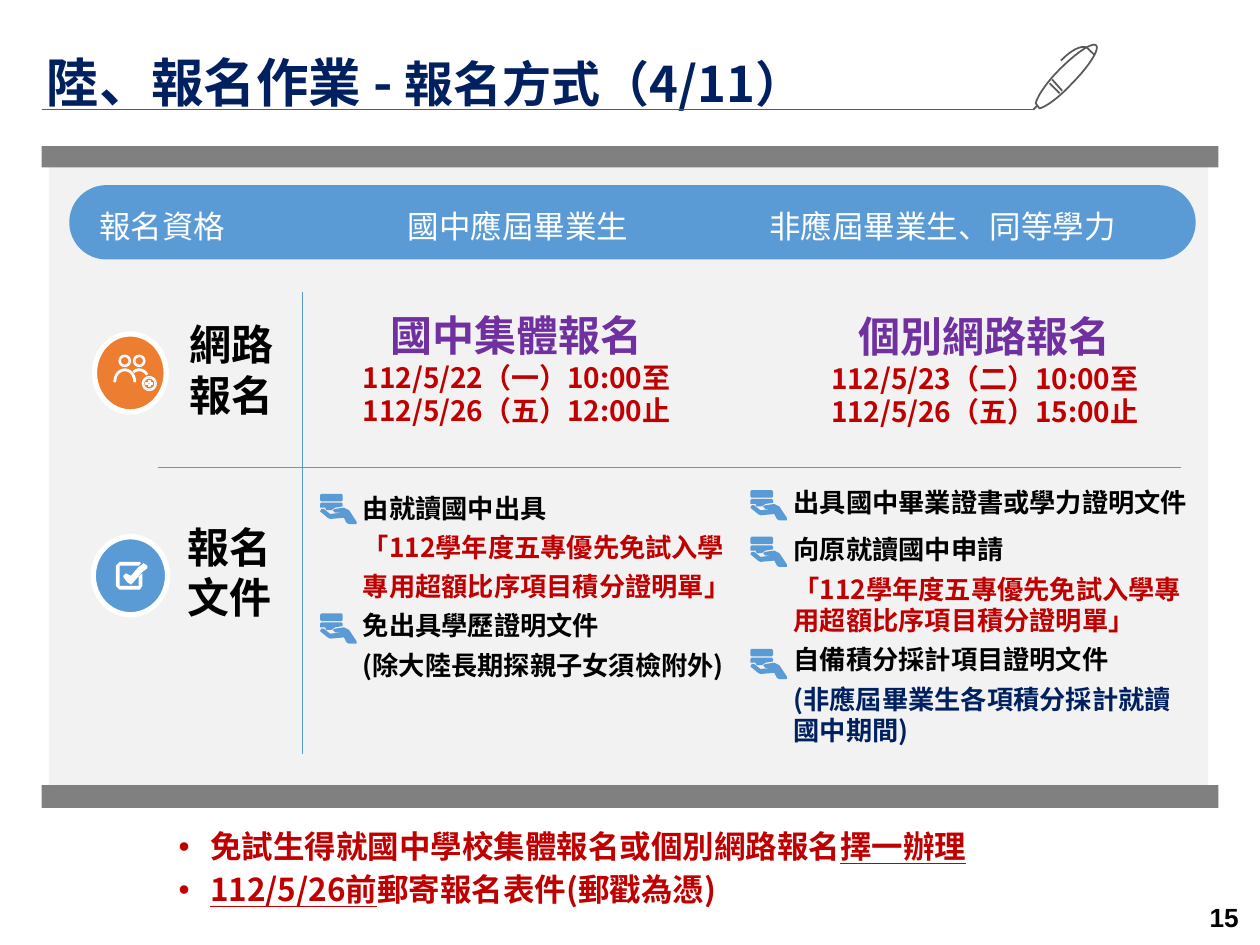
from dataclasses import dataclass
from math import cos, radians, sin

from lxml import etree
from pptx import Presentation
from pptx.dml.color import RGBColor
from pptx.enum.shapes import MSO_CONNECTOR, MSO_SHAPE
from pptx.enum.text import MSO_ANCHOR, MSO_AUTO_SIZE, PP_ALIGN
from pptx.oxml.ns import qn
from pptx.util import Pt

LEFT, CENTER, RIGHT = PP_ALIGN.LEFT, PP_ALIGN.CENTER, PP_ALIGN.RIGHT
TOP, MIDDLE, BOTTOM = MSO_ANCHOR.TOP, MSO_ANCHOR.MIDDLE, MSO_ANCHOR.BOTTOM
RECTANGLE, ROUNDED, OVAL = MSO_SHAPE.RECTANGLE, MSO_SHAPE.ROUNDED_RECTANGLE, MSO_SHAPE.OVAL
STRAIGHT = MSO_CONNECTOR.STRAIGHT
GROW, FIXED = MSO_AUTO_SIZE.SHAPE_TO_FIT_TEXT, MSO_AUTO_SIZE.NONE
DEFAULT_MARGINS, TIGHT_MARGINS = (7.2, 3.6), (5.04, 2.88)
ICON_UNIT = 0.72


@dataclass(frozen=True)
class Theme:
    font: str = "Noto Sans CJK SC"
    number_font: str = "Arial"
    navy: str = "002060"
    red: str = "C00000"
    purple: str = "7030A0"
    blue: str = "5B9BD5"
    orange: str = "ED7D31"
    panel: str = "F2F2F2"
    bar: str = "808080"
    ink: str = "595959"
    black: str = "000000"
    white: str = "FFFFFF"
    title: int = 30
    subtitle: int = 28
    heading: int = 24
    note: int = 18
    date: int = 16
    body: int = 15


THEME = Theme()


@dataclass
class Line:
    runs: object
    size: int
    color: str
    bold: bool = True
    align: object = LEFT
    before: float = 0
    after: float = 0
    spacing: float = 1
    bullet: bool = False
    tabs: tuple = ()
    font: str = THEME.font


def arc(x, y, radius_x, radius_y, start=0, end=360):
    steps = 16
    angles = [radians(start + (end - start) * i / steps) for i in range(steps + 1)]
    return [(x + radius_x * cos(a), y + radius_y * sin(a)) for a in angles]


def band(x, y, radius_x, radius_y, start, end):
    return arc(x, y, radius_x, radius_y, start, end) + arc(x, y, radius_x - 1.2, radius_y - 1.2, end, start)


def curve(a, b, c, d):
    steps = [i / 10 for i in range(11)]
    return [tuple((1 - t) ** 3 * p + 3 * t * (1 - t) ** 2 * q + 3 * t * t * (1 - t) * r + t ** 3 * s
                  for p, q, r, s in zip(a, b, c, d)) for t in steps]


HAND = [
    [(19, 11), (23, 13), (29, 22), (29, 24), (23, 24), (21, 23), (19, 19), (8, 20), (6, 19), (0, 14),
     (1, 12), (3, 12), (8, 16), (18, 15), (12, 15), (10, 13), (12, 12)],
    [(1, 7), (17, 7), (18, 8), (18, 10), (12, 11), (9, 13), (5, 13), (4, 11), (0, 11), (0, 8)],
    [(1, 0), (17, 0), (18, 1), (18, 5), (17, 6), (1, 6), (0, 5), (0, 1)],
]
CHECK_BOX = [
    [(22, 1), (25, 3), (25, 5), (21, 8), (14, 16), (12, 18), (9, 16), (6, 12), (6, 11), (8, 9),
     (12, 11), (18, 4), (21, 2)],
    [(3, 0), (19, 0), (20, 1), (18, 3), (3, 3), (3, 19), (18, 19), (18, 12), (21, 9), (21, 19),
     (19, 22), (3, 22), (0, 19), (0, 3)],
]
PEOPLE = [arc(x, y, r, r) for x, y, outer in ((9, 4.5, 4.5), (20.5, 4.5, 4.5), (28.5, 22.5, 5.5))
          for r in (outer, outer - 1)] + [
    band(9, 21, 8.5, 10, 180, 360),
    band(20.5, 20, 8, 9, 235, 325),
    [(28, 20), (29, 20), (29, 22), (31, 22), (31, 23), (29, 23), (29, 25), (28, 25), (28, 23),
     (26, 23), (26, 22), (28, 22)],
]
PEN_BODY = [curve((50, 3), (47, 0), (34, 9), (21, 22)) + curve((21, 22), (10, 33), (3, 44), (2, 49))
            + curve((5, 53), (10, 52), (21, 44), (31, 33)) + curve((31, 33), (44, 20), (53, 6), (50, 3))]
PEN_DETAILS = [
    [(21, 41), (13, 33)], [(15, 30), (23, 39)], [(3, 51), (0, 54)],
    [(49, 11)] + curve((43, 5), (43, 5), (37, 0), (22, 15)),
]


class SlideBuilder:
    """Holds the theme and the current slide, and adds each kind of element."""

    def __init__(self, slide, theme):
        self.slide = slide
        self.theme = theme

    def paint(self, shape, fill=None, line=None, width=1):
        shape.shadow.inherit = False
        if fill:
            shape.fill.solid()
            shape.fill.fore_color.rgb = RGBColor.from_string(fill)
        else:
            shape.fill.background()
        if line:
            shape.line.color.rgb = RGBColor.from_string(line)
            shape.line.width = Pt(width)
        else:
            shape.line.fill.background()

    def shape(self, kind, box, fill, line=None, width=1):
        shape = self.slide.shapes.add_shape(kind, *map(Pt, box))
        self.paint(shape, fill, line, width)
        return shape

    def rule(self, start, end, color, width):
        connector = self.slide.shapes.add_connector(STRAIGHT, *map(Pt, start + end))
        connector.line.color.rgb = RGBColor.from_string(color)
        connector.line.width = Pt(width)
        etree.SubElement(connector._element.spPr, qn("a:effectLst"))

    def icon(self, contours, left, top, fill=None, line=None, width=1, closed=True):
        scaled = [[(x * 100, y * 100) for x, y in contour] for contour in contours]
        builder = self.slide.shapes.build_freeform(*scaled[0][0], scale=Pt(ICON_UNIT) / 100)
        for index, contour in enumerate(scaled):
            if index:
                builder.move_to(*contour[0])
            builder.add_line_segments(contour[1:], close=closed)
        self.paint(builder.convert_to_shape(Pt(left), Pt(top)), fill, line, width)

    def set_text(self, frame, lines, anchor=TOP, wrap=True, margins=DEFAULT_MARGINS, fit=FIXED):
        frame.word_wrap = wrap
        frame.auto_size = fit
        frame.vertical_anchor = anchor
        frame.margin_left = frame.margin_right = Pt(margins[0])
        frame.margin_top = frame.margin_bottom = Pt(margins[1])
        for index, line in enumerate(lines):
            paragraph = frame.add_paragraph() if index else frame.paragraphs[0]
            self.style_paragraph(paragraph, line)
            runs = [(line.runs, {})] if isinstance(line.runs, str) else line.runs
            for text, overrides in runs:
                run = paragraph.add_run()
                run.text = text
                if "size" in overrides:
                    run.font.size = Pt(overrides["size"])
                if "underline" in overrides:
                    run.font.underline = overrides["underline"]

    def style_paragraph(self, paragraph, line):
        properties = paragraph._p.get_or_add_pPr()
        if line.bullet:
            properties.set("marL", str(Pt(18)))
            properties.set("indent", str(-Pt(18)))
            etree.SubElement(properties, qn("a:buFont"), typeface="Arial")
            etree.SubElement(properties, qn("a:buChar"), char="•")
        if line.tabs:
            stops = etree.SubElement(properties, qn("a:tabLst"))
            for position in line.tabs:
                etree.SubElement(stops, qn("a:tab"), pos=str(Pt(position)), algn="l")
        paragraph.alignment = line.align
        paragraph.line_spacing = line.spacing
        paragraph.space_before, paragraph.space_after = Pt(line.before), Pt(line.after)
        font = paragraph.font
        font.size, font.bold, font.name = Pt(line.size), line.bold, line.font
        font.color.rgb = RGBColor.from_string(line.color)
        etree.SubElement(font._element, qn("a:ea"), typeface=line.font)

    def text(self, box, lines, **options):
        self.set_text(self.slide.shapes.add_textbox(*map(Pt, box)).text_frame, lines, **options)

    def title(self, box, line):
        title = self.slide.shapes.title
        title.left, title.top, title.width, title.height = map(Pt, box)
        self.set_text(title.text_frame, [line])


def main():
    presentation = Presentation()
    presentation.slide_width, presentation.slide_height = Pt(720), Pt(540)
    page = SlideBuilder(presentation.slides.add_slide(presentation.slide_layouts[5]), THEME)
    t = page.theme
    tight = dict(anchor=BOTTOM, wrap=False, margins=TIGHT_MARGINS)

    page.title((19.4, 28.8, 568, 34.6), Line([
        ("陸、報名作業 - ", {"size": t.title}), ("報名方式（4/11）", {"size": t.subtitle}),
    ], t.title, t.navy, spacing=0.9))
    page.rule((23.8, 62.6), (590.4, 62.6), t.ink, 0.5)
    page.icon(PEN_BODY, 590.4, 23.8, line=t.ink)
    page.icon(PEN_DETAILS, 590.4, 23.8, line=t.ink, closed=False)

    page.shape(RECTANGLE, (28, 90, 662.4, 358.6), t.panel)
    for top, height in ((83.5, 12.2), (448.6, 13)):
        page.shape(RECTANGLE, (23.8, top, 672.5, height), t.bar)
    page.rule((90, 267.1), (674.6, 267.1), t.blue, 0.25)
    page.rule((172.8, 167), (172.8, 430.6), t.blue, 0.25)
    header = page.shape(ROUNDED, (39.6, 105.8, 643.7, 42.5), t.blue)
    header.adjustments[0] = 0.5
    page.set_text(header.text_frame, [Line("報名資格\t國中應屆畢業生\t非應屆畢業生、同等學力", t.note, t.white,
                                           bold=False, spacing=1.2, tabs=(176.4, 383))],
                  anchor=MIDDLE, margins=(10.8, 3.6))

    for words, box in ((("網路", "報名"), (103, 180, 53.3, 62.6)), (("報名", "文件"), (102.2, 300.2, 52.6, 58.3))):
        page.text(box, [Line(word, t.heading, t.black) for word in words], **tight)
    page.shape(OVAL, (54, 190.8, 41, 44.6), t.orange, t.white, 3)
    page.icon(PEOPLE, 64.8, 203, t.blue, t.white, 0.75)
    page.shape(OVAL, (53.3, 306.7, 42.5, 44.6), t.blue, t.white, 3)
    page.icon(CHECK_BOX, 66.2, 321.1, t.white)

    for box, heading, dates, options in (
        ((188.6, 178.6, 213.1, 68.4), "國中集體報名", ("112/5/22（一）10:00至", "112/5/26（五）12:00止"), tight),
        ((450.7, 174.2, 223.9, 74.9), "個別網路報名", ("112/5/23（二）10:00至", "112/5/26（五）15:00止"), {"fit": GROW}),
    ):
        page.text(box, [Line(heading, t.heading, t.purple, align=CENTER)]
                  + [Line(date, t.date, t.red, align=CENTER) for date in dates], **options)

    page.text((202.3, 276.5, 225.4, 115.2), [Line(words, t.body, color, before=2.2, after=2.2) for words, color in (
        ("由就讀國中出具", t.black), ("「112學年度五專優先免試入學", t.red), ("專用超額比序項目積分證明單」", t.red),
        ("免出具學歷證明文件", t.black), ("(除大陸長期探親子女須檢附外)", t.black),
    )], **tight)
    page.text((446.4, 274.3, 239.8, 158.4), [Line(words, t.body, color, before=before) for words, color, before in (
        ("出具國中畢業證書或學力證明文件", t.black, 4.5), ("向原就讀國中申請", t.black, 9),
        ("「112學年度五專優先免試入學專用超額比序項目積分證明單」", t.red, 4.5),
        ("自備積分採計項目證明文件", t.black, 4.5), ("(非應屆畢業生各項積分採計就讀國中期間)", t.navy, 4.5),
    )], fit=GROW)
    for left, tops in ((182.9, (282.2, 350.6)), (428.8, (280.1, 306.7, 370.8))):
        for top in tops:
            page.icon(HAND, left, top, t.blue)

    underlined = {"underline": True}
    for top, width, runs in (
        (471.6, 489.6, [("免試生得就國中學校集體報名或個別網路報名", {}), ("擇一辦理", underlined)]),
        (496.1, 329, [("112/5/26前", underlined), ("郵寄報名表件(郵戳為憑)", {})]),
    ):
        page.text((95, top, width, 22.3), [Line(runs, t.note, t.red, before=10, spacing=0.9, bullet=True)])
    page.text((553, 513.4, 162, 21.6), [Line("15", t.body, t.black, align=RIGHT, font=t.number_font)], anchor=MIDDLE)
    presentation.save("out.pptx")


if __name__ == "__main__":
    main()
